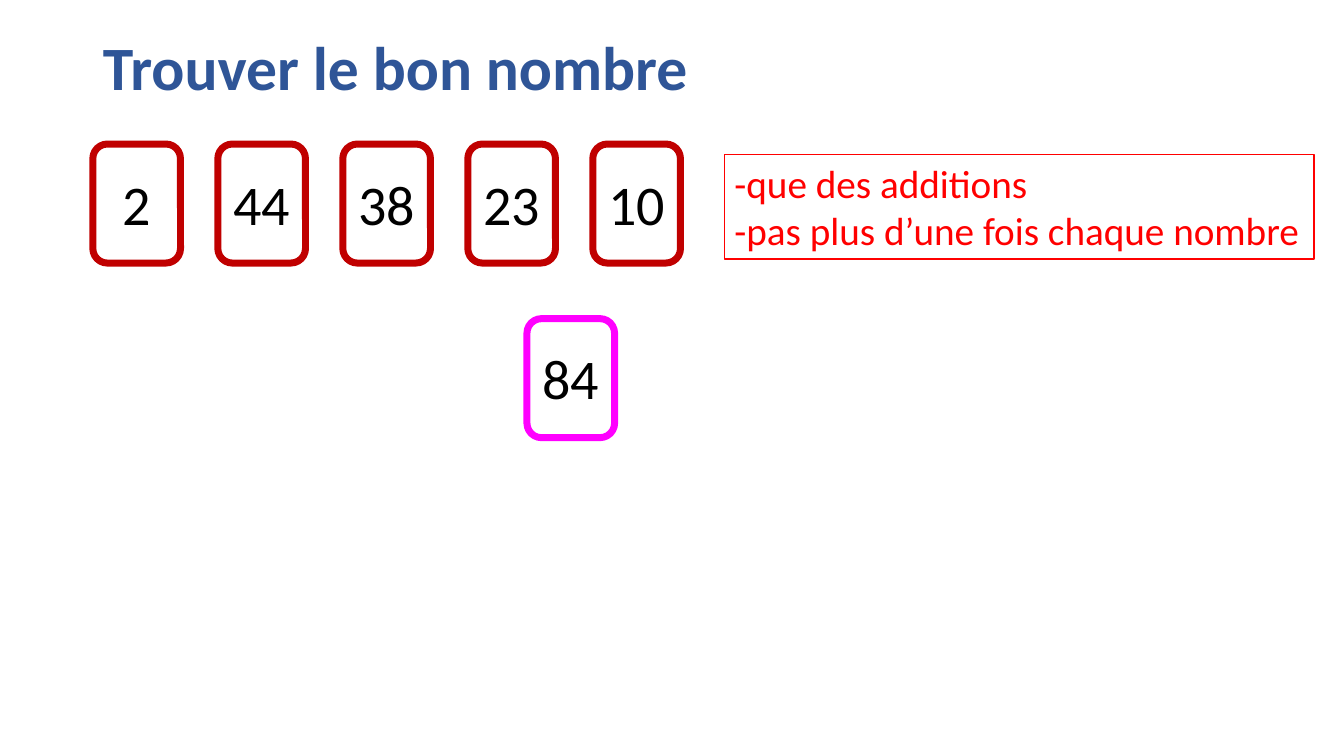
import pptx
import pptx.util
import pptx.dml.color
import pptx.enum.shapes
import pptx.enum.text

Cm, Pt = pptx.util.Cm, pptx.util.Pt
SHAPE = pptx.enum.shapes.MSO_SHAPE
ALIGN = pptx.enum.text.PP_ALIGN
ANCHOR = pptx.enum.text.MSO_ANCHOR


def rgb(value):
    return pptx.dml.color.RGBColor.from_string(value)


def write(tf, lines, color, align, fmt):
    for i, line in enumerate(lines):
        p = tf.paragraphs[0] if i == 0 else tf.add_paragraph()
        p.alignment = align
        r = p.add_run()
        r.text = line
        r.font.color.rgb = rgb(color)
        for name, value in fmt.items():
            setattr(r.font, name, value)


prs = pptx.Presentation()
prs.slide_width, prs.slide_height = Cm(33.87), Cm(19.05)
s = prs.slides.add_slide(prs.slide_layouts[5])

# Title
title = s.shapes.title
title.left, title.top, title.width, title.height = Cm(2.34), Cm(0.69), Cm(29.21), Cm(2.16)
tf = title.text_frame
tf.auto_size = pptx.enum.text.MSO_AUTO_SIZE.NONE
tf.vertical_anchor = ANCHOR.MIDDLE
write(tf, ["Trouver le bon nombre"], "2F5597", ALIGN.LEFT,
      {"name": "Calibri", "size": Pt(44), "bold": True})
tf.paragraphs[0].line_spacing = 0.9

# Number cards: five to add up, then the target
cards = [(number, 2.34 + 3.15 * i, 3.63, "C00000")
         for i, number in enumerate(["2", "44", "38", "23", "10"])]
cards.append(("84", 13.28, 8.03, "FF00FF"))
for number, x, y, color in cards:
    card = s.shapes.add_group_shape()
    sp = card.shapes.add_shape(SHAPE.ROUNDED_RECTANGLE, Cm(x), Cm(y), Cm(2.21), Cm(3))
    sp.shadow.inherit = False
    sp.fill.background()
    sp.line.color.rgb = rgb(color)
    sp.line.width = Pt(5)

    label = card.shapes.add_textbox(Cm(x + 0.14), Cm(y + 0.51), Cm(1.93), Cm(1.96))
    tf = label.text_frame
    tf.word_wrap = True
    tf.margin_left = tf.margin_right = 0
    write(tf, [number], "000000", ALIGN.CENTER, {"name": "Calibri", "size": Pt(40)})

# Rules of the game
sp = s.shapes.add_shape(SHAPE.RECTANGLE, Cm(18.26), Cm(3.89), Cm(14.86), Cm(2.64))
sp.shadow.inherit = False
sp.fill.background()
sp.line.color.rgb = rgb("FF0000")
sp.line.width = Pt(1)
tf = sp.text_frame
tf.word_wrap = True
tf.vertical_anchor = ANCHOR.TOP
write(tf, ["-que des additions", "-pas plus d’une fois chaque nombre"], "FF0000",
      ALIGN.LEFT, {"name": "Calibri", "size": Pt(28)})

prs.save("out.pptx")
